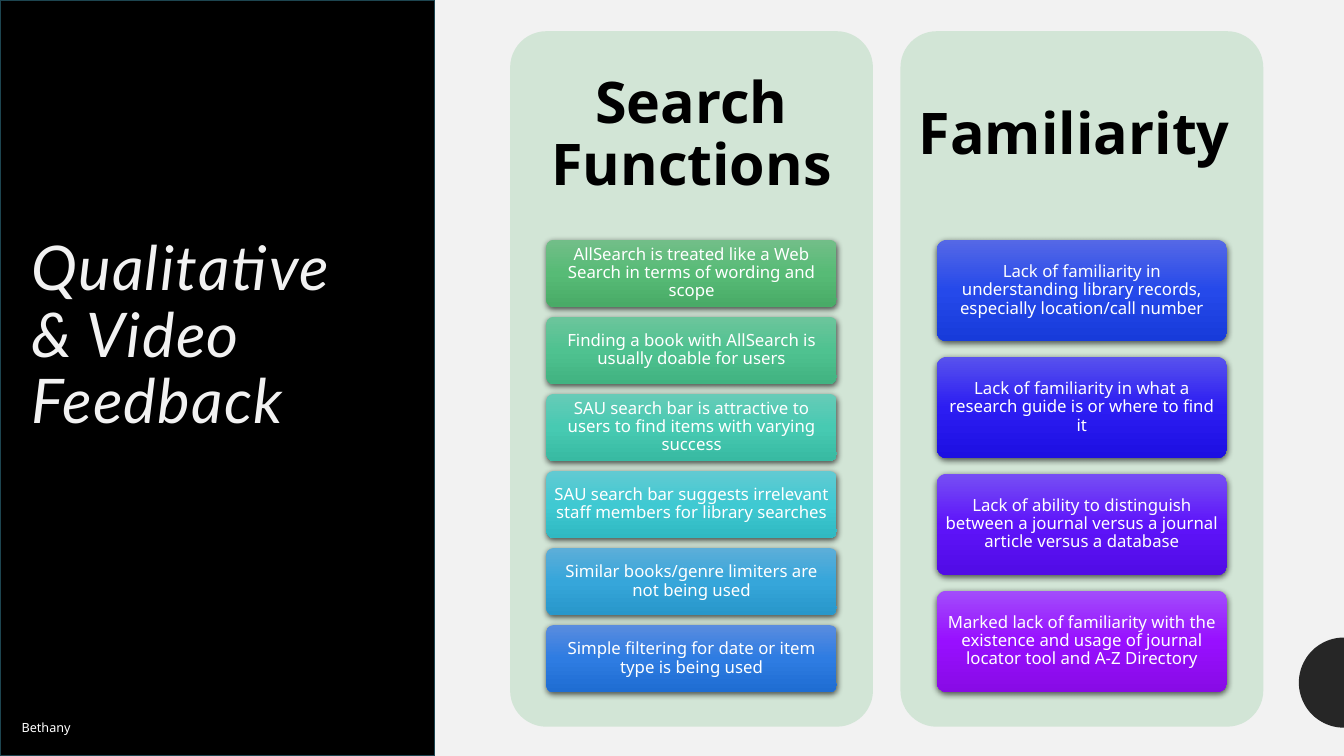
import copy
import math

import pptx
import pptx.dml.color
import pptx.enum.shapes
import pptx.enum.text
import pptx.oxml
import pptx.oxml.ns
import pptx.util

Pt = pptx.util.Pt
ShapeType = pptx.enum.shapes.MSO_SHAPE
Align = pptx.enum.text.PP_ALIGN
Anchor = pptx.enum.text.MSO_ANCHOR

COLUMN_TOP, COLUMN_WIDTH, COLUMN_HEIGHT = 22.3, 259.2, 496.8
FIRST_COLUMN_LEFT, COLUMN_STEP = 364.4, 278.8
GAP_RATIO = 2 / 13

COLUMNS = [
    ("Search Functions", [
        ("AllSearch is treated like a Web Search in terms of wording and scope",
         ("72BE88", "57BB76", "49AB67")),
        ("Finding a book with AllSearch is usually doable for users",
         ("6CC59C", "4FC290", "41B381")),
        ("SAU search bar is attractive to users to find items with varying success",
         ("67CBB7", "47CAB2", "38BAA2")),
        ("SAU search bar suggests irrelevant staff members for library searches",
         ("62CAD2", "3FC9D2", "30B9C2")),
        ("Similar books/genre limiters are not being used",
         ("5DAED9", "36A6DA", "2897CA")),
        ("Simple filtering for date or item type is being used",
         ("598CDF", "2E7CE2", "1F6DD2")),
    ]),
    ("Familiarity ", [
        ("Lack of familiarity in understanding library records, "
         "especially location/call number",
         ("5568E6", "2549EA", "173BDA")),
        ("Lack of familiarity in what a research guide is or where to find it",
         ("5852ED", "2C1DF2", "1D0FE2")),
        ("Lack of ability to distinguish between a journal versus "
         "a journal article versus a database",
         ("764FF4", "5E14FA", "510BE5")),
        ("Marked lack of familiarity with the existence and usage of "
         "journal locator tool and A-Z Directory",
         ("A24DFB", "980FFF", "880BE5")),
    ]),
]


def color(value):
    return pptx.dml.color.RGBColor.from_string(value)


def paint(shape, fill, line=None):
    shape.shadow.inherit = False
    shape.fill.solid()
    shape.fill.fore_color.rgb = color(fill)
    if line:
        shape.line.color.rgb = color(line)
        shape.line.width = Pt(1)
    else:
        shape.line.fill.background()


def add_panel(slide, kind, left, top, width, height, fill, line=None):
    shape = slide.shapes.add_shape(kind, Pt(left), Pt(top), Pt(width), Pt(height))
    paint(shape, fill, line)
    if kind == ShapeType.ROUNDED_RECTANGLE:
        shape.adjustments[0] = 0.1
    return shape


def write(shape, text, size, font_color, inset=None, align=Align.CENTER,
          anchor=Anchor.MIDDLE, font="Noto Sans", spacing=0.9):
    frame = shape.text_frame
    frame.word_wrap = True
    frame.vertical_anchor = anchor
    if inset is not None:
        frame.margin_left = frame.margin_right = Pt(inset)
        frame.margin_top = frame.margin_bottom = Pt(inset)
    frame.text = text
    paragraph = frame.paragraphs[0]
    paragraph.alignment = align
    paragraph.line_spacing = spacing
    for run in paragraph.runs:
        run.font.name = font
        run.font.size = Pt(size)
        run.font.color.rgb = color(font_color)
    return paragraph


def add_text(slide, left, top, width, height, *text_settings, **options):
    box = slide.shapes.add_textbox(Pt(left), Pt(top), Pt(width), Pt(height))
    write(box, *text_settings, **options)
    return box


def apply_gradient(shape, colors):
    shape.fill.gradient()
    shape.fill.gradient_angle = 270
    first_stop = shape.element.spPr.find(".//" + pptx.oxml.ns.qn("a:gs"))
    first_stop.addnext(copy.deepcopy(first_stop))
    for index, stop in enumerate(shape.fill.gradient_stops):
        stop.position = index / 2
        stop.color.rgb = color(colors[index])


def apply_shadow(shape):
    effects = shape.element.spPr.find(pptx.oxml.ns.qn("a:effectLst"))
    effects.append(pptx.oxml.parse_xml(
        f'<a:outerShdw {pptx.oxml.ns.nsdecls("a")} blurRad="{Pt(4.5)}" '
        f'dist="{Pt(1.5)}" dir="5400000" algn="ctr" rotWithShape="0">'
        '<a:srgbClr val="000000"><a:alpha val="63000"/></a:srgbClr>'
        '</a:outerShdw>'))


def add_card(slide, left, top, width, height, text, colors):
    card = add_panel(slide, ShapeType.ROUNDED_RECTANGLE,
                     left, top, width, height, colors[1])
    apply_gradient(card, colors)
    apply_shadow(card)
    write(card, text, 12, "FFFFFF", 2.4)


def add_column(slide, left, heading, cards):
    add_panel(slide, ShapeType.ROUNDED_RECTANGLE, left, COLUMN_TOP,
              COLUMN_WIDTH, COLUMN_HEIGHT, "D2E5D6")
    heading_height = COLUMN_HEIGHT * 0.3
    box = add_text(slide, left, COLUMN_TOP, COLUMN_WIDTH, heading_height,
                   heading, 41, "000000", 12.2)
    box.text_frame.paragraphs[0].runs[0].font.bold = True
    count = len(cards)
    card_height = COLUMN_HEIGHT * 0.65 / (count + (count - 1) * GAP_RATIO)
    for index, (text, colors) in enumerate(cards):
        top = COLUMN_TOP + heading_height + index * card_height * (1 + GAP_RATIO)
        add_card(slide, left + COLUMN_WIDTH * 0.1, top,
                 COLUMN_WIDTH * 0.8, card_height, text, colors)


def add_half_circle(slide, center_x, center_y, radius, fill):
    angles = [math.pi / 2 + math.pi * step / 48 for step in range(49)]
    points = [(Pt(center_x + radius * math.cos(angle)),
               Pt(center_y - radius * math.sin(angle))) for angle in angles]
    builder = slide.shapes.build_freeform(*points[0])
    builder.add_line_segments(points[1:], close=True)
    paint(builder.convert_to_shape(), fill)


def add_title(slide, text):
    box = add_text(slide, 15.1, 166.3, 281.5, 208, text, 44, "F2F2F2",
                   align=Align.LEFT, anchor=Anchor.TOP, font="Lato")
    for run in box.text_frame.paragraphs[0].runs:
        run.font.italic = True
        run.font._element.set("spc", "100")


def main():
    presentation = pptx.Presentation()
    presentation.slide_width = Pt(960)
    presentation.slide_height = Pt(540)
    slide = presentation.slides.add_slide(presentation.slide_layouts[6])
    slide.background.fill.solid()
    slide.background.fill.fore_color.rgb = color("F2F2F2")

    add_half_circle(slide, 960, 487.6, 32.2, "262626")
    for index, (heading, cards) in enumerate(COLUMNS):
        add_column(slide, FIRST_COLUMN_LEFT + index * COLUMN_STEP, heading, cards)
    add_panel(slide, ShapeType.RECTANGLE, 0, 0, 310.6, 540, "000000", "1D4550")
    add_title(slide, "Qualitative\v& Video\vFeedback")
    presenter = add_text(slide, 8.4, 510.5, 52, 18, "Bethany", 9, "FFFFFF",
                         align=Align.LEFT, anchor=Anchor.TOP, spacing=1.0)
    presenter.text_frame.word_wrap = False
    presenter.text_frame.auto_size = pptx.enum.text.MSO_AUTO_SIZE.SHAPE_TO_FIT_TEXT
    presentation.save("out.pptx")


if __name__ == "__main__":
    main()
